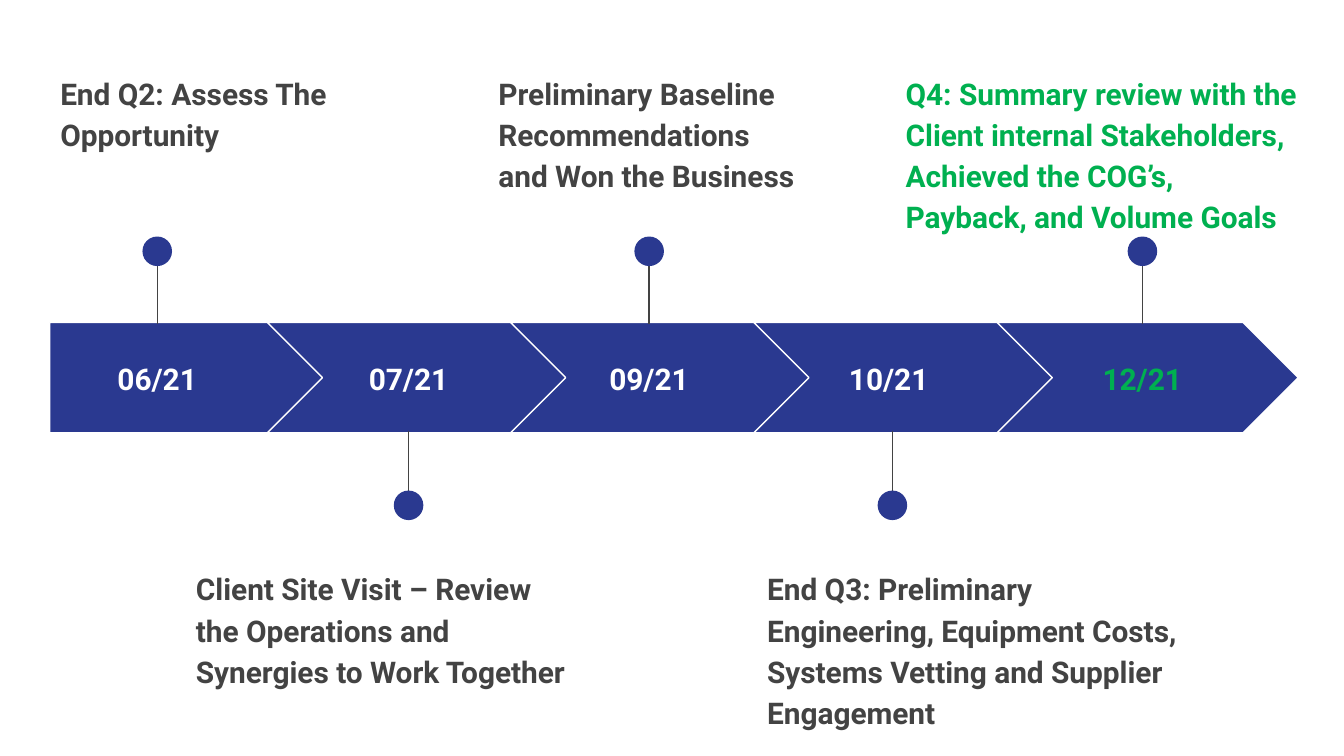
import dataclasses

import pptx
import pptx.dml.color
import pptx.enum.shapes
import pptx.enum.text
import pptx.oxml.ns
import pptx.util
from pptx.util import Inches

SHAPES = pptx.enum.shapes.MSO_SHAPE
ALIGN = pptx.enum.text.PP_ALIGN
ANCHOR = pptx.enum.text.MSO_ANCHOR


@dataclasses.dataclass(frozen=True)
class Theme:
    font: str = "Roboto"
    size: int = 16
    line_width: float = 0.75
    navy: str = "2A3990"
    white: str = "FFFFFF"
    grey: str = "434343"
    green: str = "00B050"


@dataclasses.dataclass(frozen=True)
class Milestone:
    date: str
    note: str
    center: float
    note_left: float
    note_width: float
    date_width: float = 1.44
    achieved: bool = False


MILESTONES = [
    Milestone("06/21", "End Q2: Assess The Opportunity", 1.17, 0.35, 2.45, date_width=1.59),
    Milestone("07/21", "Client Site Visit – Review the Operations and Synergies to Work Together",
              3.04, 1.36, 3.03),
    Milestone("09/21", "Preliminary Baseline Recommendations and Won the Business",
              4.83, 3.61, 2.45),
    Milestone("10/21 ", "End Q3: Preliminary Engineering, Equipment Costs, "
              "Systems Vetting and Supplier Engagement", 6.64, 5.61, 3.37),
    Milestone("12/21", "Q4: Summary review with the Client internal Stakeholders, "
              "Achieved the COG’s, Payback, and Volume Goals", 8.5, 6.64, 3.12, achieved=True),
]

BAND_TOP, BAND_HEIGHT = 2.4, 0.82
FIRST_LEFT, FIRST_WIDTH = 0.37, 2.05
CHEVRON_LEFT, CHEVRON_WIDTH, CHEVRON_STEP = 1.99, 2.24, 1.81
DATE_TOP, DATE_HEIGHT = 2.56, 0.51
NOTE_HEIGHT = 0.99
NOTE_TOP_ABOVE, NOTE_TOP_BELOW = 0.42, 4.11
DOT_SIZE = 0.22
DOT_TOP_ABOVE, DOT_TOP_BELOW = 1.76, 3.65
STEM_ABOVE, STEM_BELOW = (1.8, 2.41), (3.82, 3.21)


def color(value):
    return pptx.dml.color.RGBColor.from_string(value)


def write(box, text, *, theme, ink, align=ALIGN.LEFT, anchor=ANCHOR.TOP, spacing=1.0, after=0):
    frame = box.text_frame
    frame.word_wrap = True
    frame.vertical_anchor = anchor
    frame.margin_left = frame.margin_right = Inches(0.1)
    frame.margin_top = frame.margin_bottom = Inches(0.1)
    para = frame.paragraphs[0]
    para.alignment = align
    para.line_spacing = spacing
    para.space_after = pptx.util.Pt(after)
    span = para.add_run()
    span.text = text
    span.font.name = theme.font
    span.font.size = pptx.util.Pt(theme.size)
    span.font.bold = True
    span.font.color.rgb = color(ink)


class TimelinePage:
    def __init__(self, page, theme):
        self.page = page
        self.theme = theme

    def shape(self, kind, left, top, width, height, outline=None):
        shape = self.page.shapes.add_shape(
            kind, Inches(left), Inches(top), Inches(width), Inches(height))
        shape.shadow.inherit = False
        shape.fill.solid()
        shape.fill.fore_color.rgb = color(self.theme.navy)
        if outline:
            shape.line.color.rgb = color(outline)
            shape.line.width = pptx.util.Pt(self.theme.line_width)
        else:
            shape.line.fill.background()

    def text(self, text, left, top, width, height, **style):
        box = self.page.shapes.add_textbox(
            Inches(left), Inches(top), Inches(width), Inches(height))
        write(box, text, theme=self.theme, **style)

    def stem(self, center, start, end):
        line = self.page.shapes.add_connector(
            pptx.enum.shapes.MSO_CONNECTOR.STRAIGHT,
            Inches(center), Inches(start), Inches(center), Inches(end))
        line.line.color.rgb = color(self.theme.grey)
        line.line.width = pptx.util.Pt(self.theme.line_width)
        properties = line._element.spPr
        properties.append(properties.makeelement(pptx.oxml.ns.qn("a:effectLst"), {}))

    def band(self, index):
        if index == 0:
            kind, left, width = SHAPES.PENTAGON, FIRST_LEFT, FIRST_WIDTH
        else:
            kind, width = SHAPES.CHEVRON, CHEVRON_WIDTH
            left = CHEVRON_LEFT + CHEVRON_STEP * (index - 1)
        self.shape(kind, left, BAND_TOP, width, BAND_HEIGHT, outline=self.theme.white)

    def pin(self, center, above):
        dot_top = DOT_TOP_ABOVE if above else DOT_TOP_BELOW
        self.stem(center, *(STEM_ABOVE if above else STEM_BELOW))
        self.shape(SHAPES.OVAL, center - DOT_SIZE / 2, dot_top, DOT_SIZE, DOT_SIZE)

    def milestone(self, index, item):
        above = index % 2 == 0
        theme = self.theme
        self.band(index)
        self.text(item.date, item.center - item.date_width / 2, DATE_TOP,
                  item.date_width, DATE_HEIGHT,
                  ink=theme.green if item.achieved else theme.white,
                  align=ALIGN.CENTER, anchor=ANCHOR.MIDDLE)
        self.pin(item.center, above)
        self.text(item.note, item.note_left, NOTE_TOP_ABOVE if above else NOTE_TOP_BELOW,
                  item.note_width, NOTE_HEIGHT,
                  ink=theme.green if item.achieved else theme.grey,
                  spacing=1.15, after=16)


def main():
    deck = pptx.Presentation()
    deck.slide_width = Inches(10)
    deck.slide_height = deck.slide_width * 9 // 16
    timeline = TimelinePage(deck.slides.add_slide(deck.slide_layouts[6]), Theme())
    for index, item in enumerate(MILESTONES):
        timeline.milestone(index, item)
    deck.save("out.pptx")


if __name__ == "__main__":
    main()
